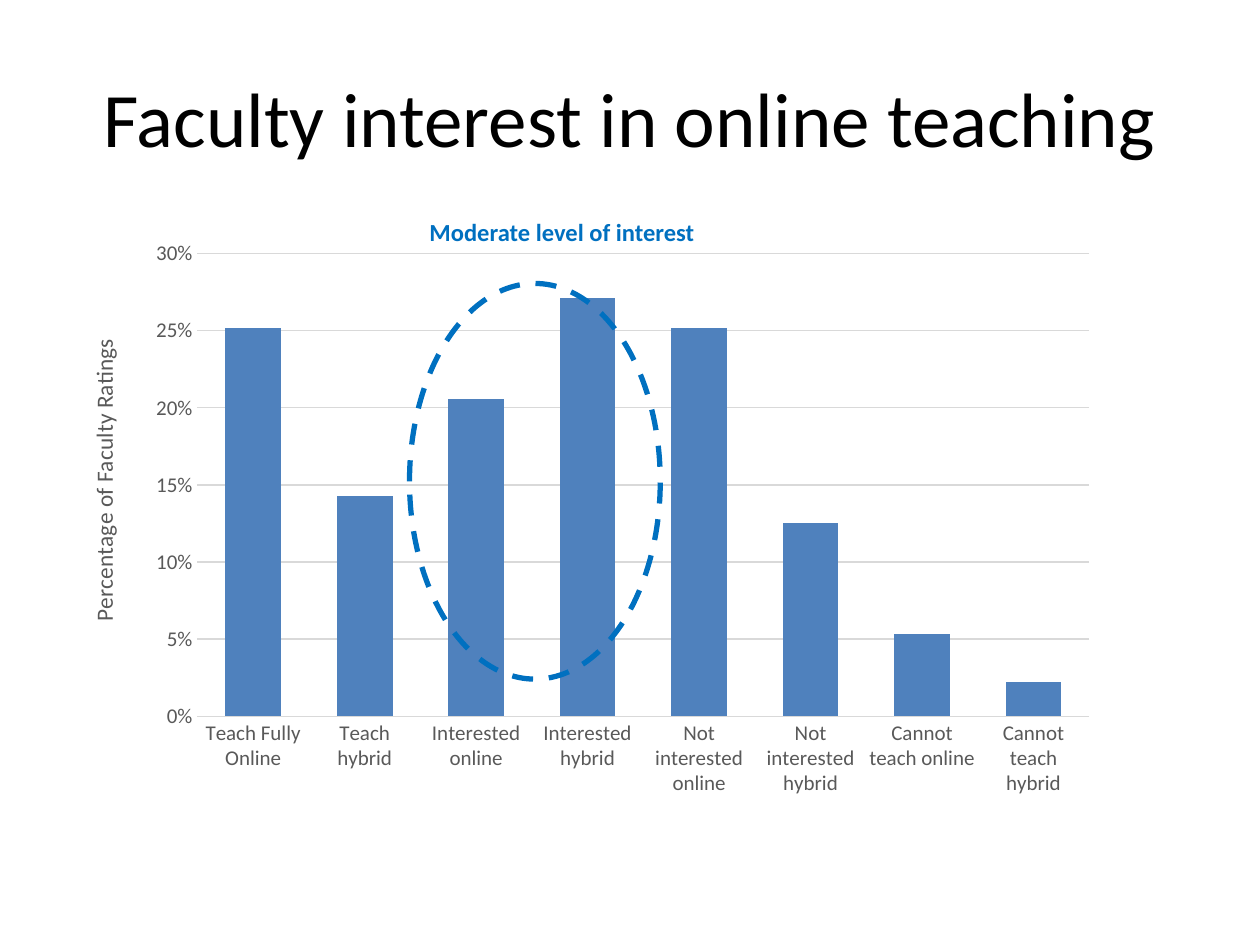
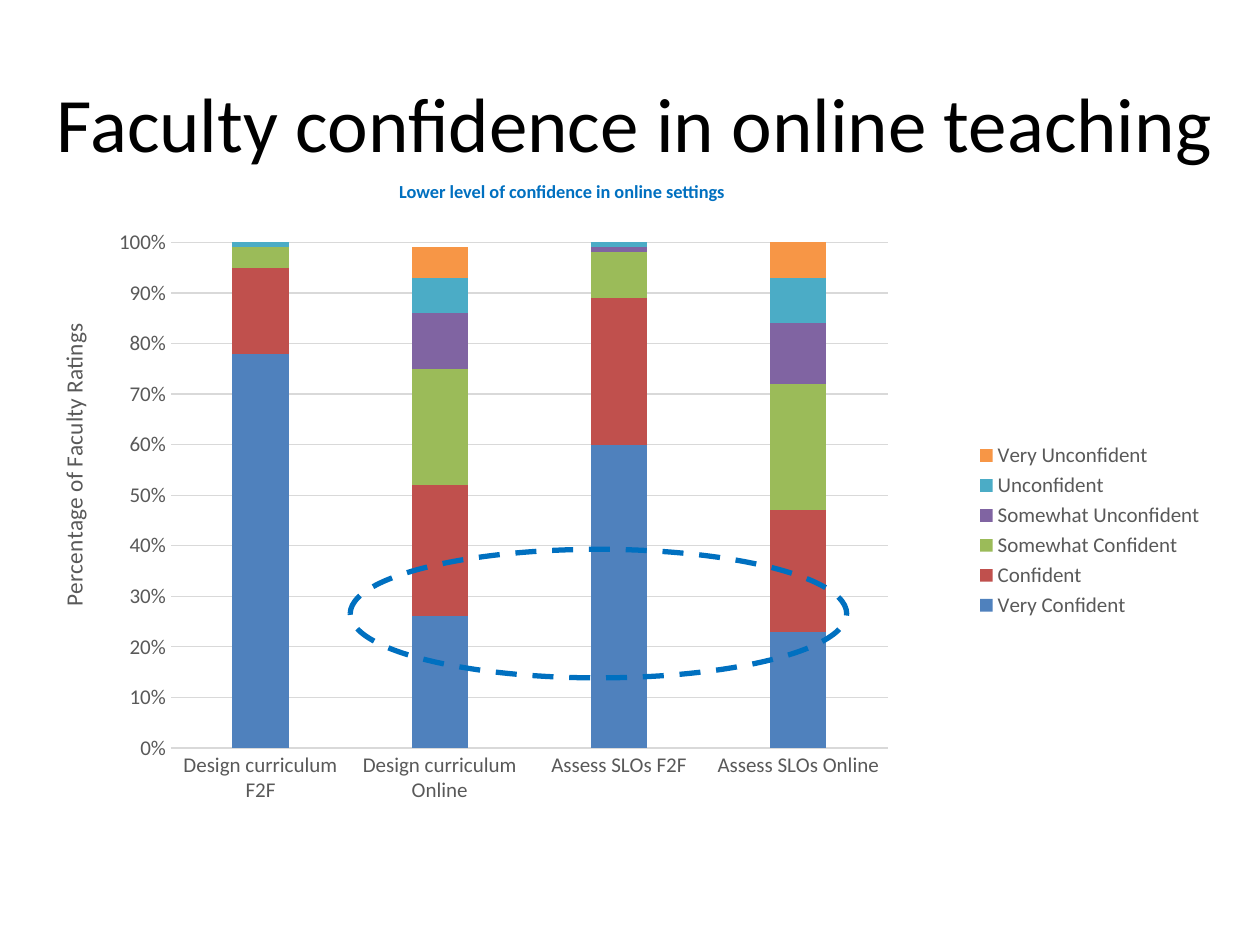
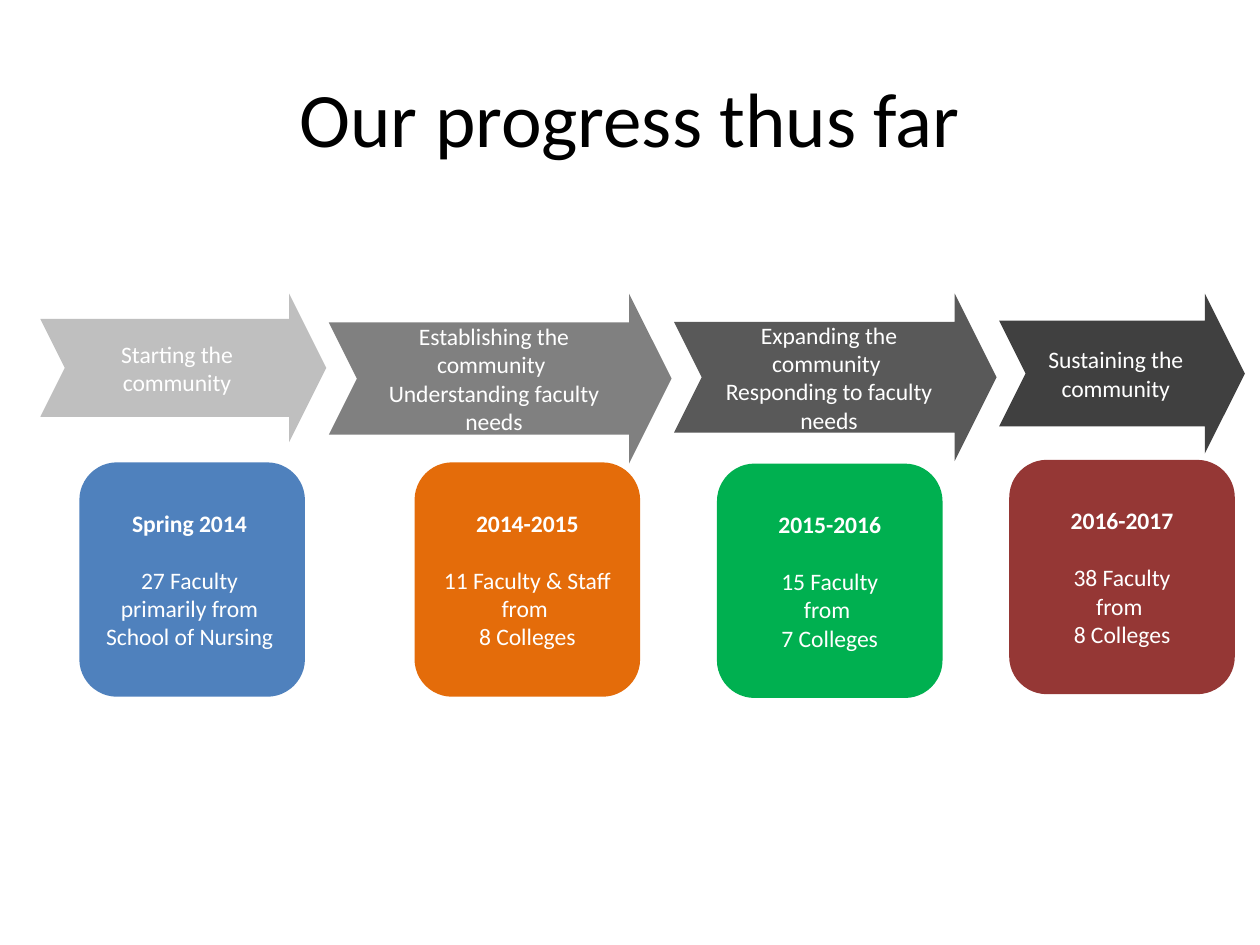
from dataclasses import dataclass
from typing import Optional

import pptx
import pptx.chart.data
import pptx.dml.color
import pptx.enum.chart
import pptx.enum.dml
import pptx.enum.shapes
import pptx.enum.text
import pptx.oxml
import pptx.oxml.ns
import pptx.util
from lxml import etree

RGBColor = pptx.dml.color.RGBColor
Pt = pptx.util.Pt
MSO_SHAPE = pptx.enum.shapes.MSO_SHAPE
qn = pptx.oxml.ns.qn

FONT = "Calibri"
BLACK = RGBColor(0x00, 0x00, 0x00)
WHITE = RGBColor(0xFF, 0xFF, 0xFF)
HIGHLIGHT = RGBColor(0x00, 0x70, 0xC0)
AXIS_TEXT = RGBColor(0x59, 0x59, 0x59)
GRID_LINE = RGBColor(0xD9, 0xD9, 0xD9)
BLUE = RGBColor(0x4F, 0x81, 0xBD)
RED = RGBColor(0xC0, 0x50, 0x4D)
GREEN = RGBColor(0x9B, 0xBB, 0x59)
PURPLE = RGBColor(0x80, 0x64, 0xA2)
TEAL = RGBColor(0x4B, 0xAC, 0xC6)
ORANGE = RGBColor(0xF7, 0x96, 0x46)
DARK_ORANGE = RGBColor(0xE4, 0x6C, 0x0A)
BRIGHT_GREEN = RGBColor(0x00, 0xB0, 0x50)
DARK_RED = RGBColor(0x95, 0x37, 0x35)
LIGHT_GRAY = RGBColor(0xBF, 0xBF, 0xBF)
MID_GRAY = RGBColor(0x80, 0x80, 0x80)
DARK_GRAY = RGBColor(0x59, 0x59, 0x59)
CHARCOAL = RGBColor(0x40, 0x40, 0x40)

# The slide is a grid of 100 columns and 75 rows of square cells.
SLIDE_WIDTH = pptx.util.Inches(10)
SLIDE_HEIGHT = pptx.util.Inches(7.5)
COLUMN = SLIDE_WIDTH / 100
ROW = SLIDE_HEIGHT / 75


@dataclass(frozen=True)
class Area:
    """A rectangle in grid columns and rows."""
    left: float
    top: float
    width: float
    height: float

    def lengths(self) -> tuple[int, int, int, int]:
        return (round(self.left * COLUMN), round(self.top * ROW),
                round(self.width * COLUMN), round(self.height * ROW))


@dataclass(frozen=True)
class Series:
    name: str
    values: tuple[float, ...]
    color: RGBColor


@dataclass(frozen=True)
class RatingChart:
    kind: pptx.enum.chart.XL_CHART_TYPE
    area: Area
    categories: tuple[str, ...]
    series: tuple[Series, ...]
    gap: int
    overlap: int
    maximum: float
    step: float
    plot_share: tuple[float, ...]
    axis_title_share: tuple[float, ...]
    has_legend: bool


@dataclass(frozen=True)
class RatingSlide:
    title: str
    title_area: Area
    chart: RatingChart
    remark: str
    remark_area: Area
    remark_size: float
    ellipse_area: Area


@dataclass(frozen=True)
class Stage:
    """One arrow of the timeline and the box below it."""
    arrow_lines: tuple[str, ...]
    arrow_width: float
    arrow_height: float
    arrow_color: RGBColor
    period: str
    members: tuple[str, ...]
    box_left: float
    box_top: float
    box_color: RGBColor


TITLE_AREA = Area(5, 3, 90, 12.5)
AXIS_TITLE = "Percentage of Faculty Ratings"
TEXT_SIZE = 13.5
ARROW_LEFT, ARROW_TOP, ARROW_GAP = 3.2, 23.3, 0.2
BOX_WIDTH, BOX_HEIGHT = 17.9, 18.6

INTEREST = RatingSlide(
    "Faculty interest in online teaching", TITLE_AREA,
    RatingChart(
        pptx.enum.chart.XL_CHART_TYPE.COLUMN_CLUSTERED,
        Area(5.8, 18.3, 82.3, 45.9),
        ("Teach Fully Online", "Teach hybrid", "Interested online",
         "Interested hybrid", "Not interested online",
         "Not interested hybrid", "Cannot teach online",
         "Cannot teach hybrid"),
        (Series("Series 1", (0.252, 0.143, 0.206, 0.271,
                             0.252, 0.125, 0.053, 0.022), BLUE),),
        gap=100, overlap=-27, maximum=0.3, step=0.05,
        plot_share=(0.12, 0.04, 0.86, 0.8), axis_title_share=(0.01, 0.18),
        has_legend=False),
    "Moderate level of interest", Area(33.1, 16.7, 33.9, 3.4), 14,
    Area(32.5, 22.5, 19.9, 31.4))

CONFIDENCE = RatingSlide(
    "Faculty confidence in online teaching", Area(2.5, 3.7, 95.8, 11.9),
    RatingChart(
        pptx.enum.chart.XL_CHART_TYPE.COLUMN_STACKED,
        Area(3.3, 16.7, 93.3, 50.8),
        ("Design curriculum F2F", "Design curriculum Online",
         "Assess SLOs F2F", "Assess SLOs Online"),
        (Series("Very Confident", (0.78, 0.26, 0.6, 0.23), BLUE),
         Series("Confident", (0.17, 0.26, 0.29, 0.24), RED),
         Series("Somewhat Confident", (0.04, 0.23, 0.09, 0.25), GREEN),
         Series("Somewhat Unconfident", (0, 0.11, 0.01, 0.12), PURPLE),
         Series("Unconfident", (0.01, 0.07, 0.01, 0.09), TEAL),
         Series("Very Unconfident", (0, 0.06, 0, 0.07), ORANGE)),
        gap=219, overlap=100, maximum=1, step=0.1,
        plot_share=(0.11, 0.05, 0.61, 0.79), axis_title_share=(0.01, 0.17),
        has_legend=True),
    "Lower level of confidence in online settings",
    Area(30.7, 13.8, 33.7, 4.5), 10.5,
    Area(27.8, 43.6, 39.4, 10.2))

STAGES = (
    Stage(("Starting the community",), 22.7, 11.8, LIGHT_GRAY,
          "Spring 2014 ",
          ("27 Faculty ", "primarily from ", "School of Nursing "),
          6.3, 36.7, BLUE),
    Stage(("Establishing the community ", "Understanding faculty needs"),
          27.2, 13.5, MID_GRAY,
          "2014-2015", ("11 Faculty & Staff", "from ", "8 Colleges"),
          32.9, 36.7, DARK_ORANGE),
    Stage(("Expanding the community ", "Responding to faculty needs"),
          25.6, 13.3, DARK_GRAY,
          "2015-2016", ("15 Faculty", "from ", "7 Colleges"),
          56.9, 36.8, BRIGHT_GREEN),
    Stage(("Sustaining the community",), 19.5, 12.7, CHARCOAL,
          "2016-2017", ("38 Faculty", "from ", "8 Colleges"),
          80.1, 36.5, DARK_RED),
)


def style_font(font, size: float, color: RGBColor, bold: bool = False) -> None:
    font.name = FONT
    font.size = Pt(size)
    font.bold = bold
    font.color.rgb = color


def write_text(text_frame, lines: tuple[str, ...], size: float,
               color: RGBColor, bold: bool = False,
               centered: bool = True) -> None:
    text_frame.word_wrap = True
    text_frame.text = "\n".join(lines)
    for paragraph in text_frame.paragraphs:
        if centered:
            paragraph.alignment = pptx.enum.text.PP_ALIGN.CENTER
        for run in paragraph.runs:
            style_font(run.font, size, color, bold)


def add_title(slide, title: str, area: Area) -> None:
    text_frame = slide.shapes.add_textbox(*area.lengths()).text_frame
    write_text(text_frame, (title,), 44, BLACK)
    text_frame.vertical_anchor = pptx.enum.text.MSO_ANCHOR.MIDDLE


def add_remark(slide, remark: str, area: Area, size: float) -> None:
    text_frame = slide.shapes.add_textbox(*area.lengths()).text_frame
    write_text(text_frame, (remark,), size, HIGHLIGHT, bold=True,
               centered=False)


def add_dashed_ellipse(slide, area: Area) -> None:
    ellipse = slide.shapes.add_shape(MSO_SHAPE.OVAL, *area.lengths())
    ellipse.shadow.inherit = False
    ellipse.fill.background()
    ellipse.line.color.rgb = HIGHLIGHT
    ellipse.line.width = Pt(3)
    ellipse.line.dash_style = pptx.enum.dml.MSO_LINE.DASH


def add_filled_shape(slide, kind: MSO_SHAPE, area: Area, color: RGBColor,
                     lines: tuple[str, ...]):
    shape = slide.shapes.add_shape(kind, *area.lengths())
    shape.shadow.inherit = False
    shape.fill.solid()
    shape.fill.fore_color.rgb = color
    shape.line.fill.background()
    write_text(shape.text_frame, lines, TEXT_SIZE, WHITE)
    shape.text_frame.vertical_anchor = pptx.enum.text.MSO_ANCHOR.MIDDLE
    return shape


def set_layout(element, share: tuple[float, ...]) -> None:
    """Place a chart part by shares of the chart: x, y and maybe w, h."""
    layout = element.find(qn("c:layout"))
    if layout is None:
        layout = pptx.oxml.parse_xml(
            f"<c:layout {pptx.oxml.ns.nsdecls('c')}/>")
        element.insert(0, layout)
    manual = etree.SubElement(layout, qn("c:manualLayout"))
    settings = [("xMode", "edge"), ("yMode", "edge")]
    if len(share) == 4:
        settings.insert(0, ("layoutTarget", "inner"))
    settings += zip("xywh", share)
    for name, value in settings:
        etree.SubElement(manual, qn(f"c:{name}")).set("val", str(value))


def style_axes(chart, rating: RatingChart) -> None:
    for axis in (chart.category_axis, chart.value_axis):
        axis.major_tick_mark = pptx.enum.chart.XL_TICK_MARK.NONE
        axis.minor_tick_mark = pptx.enum.chart.XL_TICK_MARK.NONE
        style_font(axis.tick_labels.font, 12, AXIS_TEXT)

    value_axis = chart.value_axis
    value_axis.minimum_scale = 0
    value_axis.maximum_scale = rating.maximum
    value_axis.major_unit = rating.step
    value_axis.tick_labels.number_format = "0%"
    value_axis.tick_labels.number_format_is_linked = False
    value_axis.has_major_gridlines = True
    for line in (chart.category_axis.format.line,
                 value_axis.major_gridlines.format.line):
        line.color.rgb = GRID_LINE
        line.width = Pt(0.75)
    value_axis.format.line.fill.background()

    axis_title = value_axis.axis_title
    text_frame = axis_title.text_frame
    text_frame.text = AXIS_TITLE
    style_font(text_frame.paragraphs[0].runs[0].font, 13.3, AXIS_TEXT)
    text_frame._txBody.find(qn("a:bodyPr")).set("rot", "-5400000")
    set_layout(axis_title._element, rating.axis_title_share)


def add_rating_chart(slide, rating: RatingChart) -> None:
    data = pptx.chart.data.CategoryChartData(number_format="0%")
    data.categories = rating.categories
    for series in rating.series:
        data.add_series(series.name, series.values)
    chart = slide.shapes.add_chart(
        rating.kind, *rating.area.lengths(), data).chart
    style_font(chart.font, 10, BLACK)
    chart.has_title = False

    plot = chart.plots[0]
    plot.gap_width = rating.gap
    plot.overlap = rating.overlap
    plot.vary_by_categories = False
    for drawn, series in zip(plot.series, rating.series):
        drawn.format.fill.solid()
        drawn.format.fill.fore_color.rgb = series.color

    style_axes(chart, rating)
    set_layout(chart._chartSpace.chart.plotArea, rating.plot_share)
    chart.has_legend = rating.has_legend
    if rating.has_legend:
        chart.legend.position = pptx.enum.chart.XL_LEGEND_POSITION.RIGHT
        chart.legend.include_in_layout = False
        style_font(chart.legend.font, 12, AXIS_TEXT)


def draw_rating_slide(slide, content: RatingSlide) -> None:
    add_title(slide, content.title, content.title_area)
    add_rating_chart(slide, content.chart)
    add_dashed_ellipse(slide, content.ellipse_area)
    add_remark(slide, content.remark, content.remark_area,
               content.remark_size)


def add_stage_box(slide, stage: Stage) -> None:
    area = Area(stage.box_left, stage.box_top, BOX_WIDTH, BOX_HEIGHT)
    box = add_filled_shape(slide, MSO_SHAPE.ROUNDED_RECTANGLE, area,
                           stage.box_color, (stage.period, *stage.members))
    period = box.text_frame.paragraphs[0]
    period.space_after = Pt(16.5)
    period.runs[0].font.bold = True


def add_stage_arrow(slide, stage: Stage, left: float) -> None:
    area = Area(left, ARROW_TOP, stage.arrow_width, stage.arrow_height)
    arrow = add_filled_shape(slide, MSO_SHAPE.NOTCHED_RIGHT_ARROW, area,
                             stage.arrow_color, stage.arrow_lines)
    arrow.adjustments[0] = 0.66
    arrow.adjustments[1] = 0.25
    text_frame = arrow.text_frame
    text_frame.margin_left = round(1.8 * COLUMN)
    text_frame.margin_right = round(2.8 * COLUMN)
    text_frame.margin_top = text_frame.margin_bottom = 0


def draw_progress_slide(slide) -> None:
    add_title(slide, "Our progress thus far", TITLE_AREA)
    left = ARROW_LEFT
    for stage in STAGES:
        add_stage_box(slide, stage)
        add_stage_arrow(slide, stage, left)
        left += stage.arrow_width + ARROW_GAP


def main() -> None:
    presentation = pptx.Presentation()
    presentation.slide_width = SLIDE_WIDTH
    presentation.slide_height = SLIDE_HEIGHT
    blank = presentation.slide_layouts[6]
    for content in (INTEREST, CONFIDENCE):
        draw_rating_slide(presentation.slides.add_slide(blank), content)
    draw_progress_slide(presentation.slides.add_slide(blank))
    presentation.save("out.pptx")


if __name__ == "__main__":
    main()
